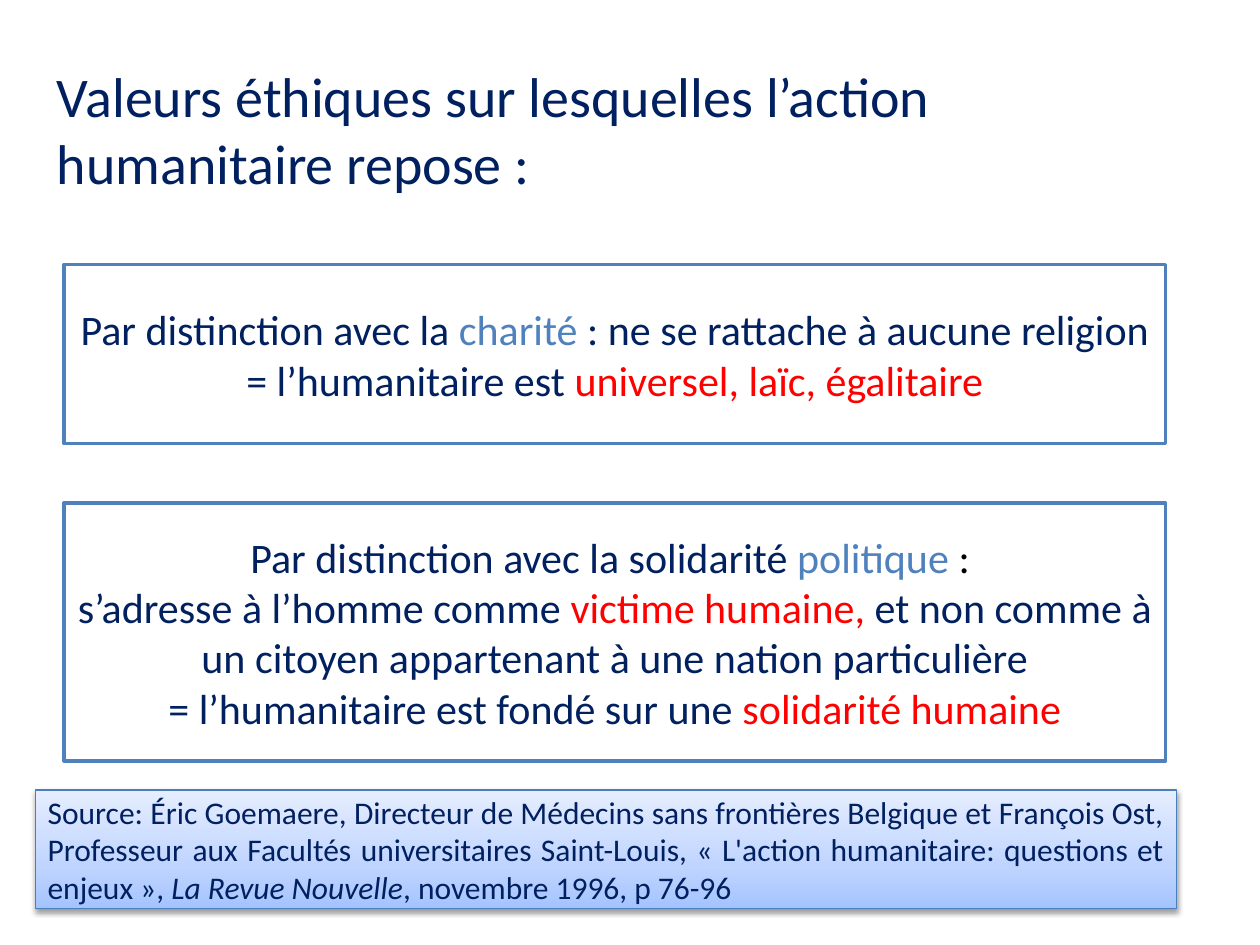
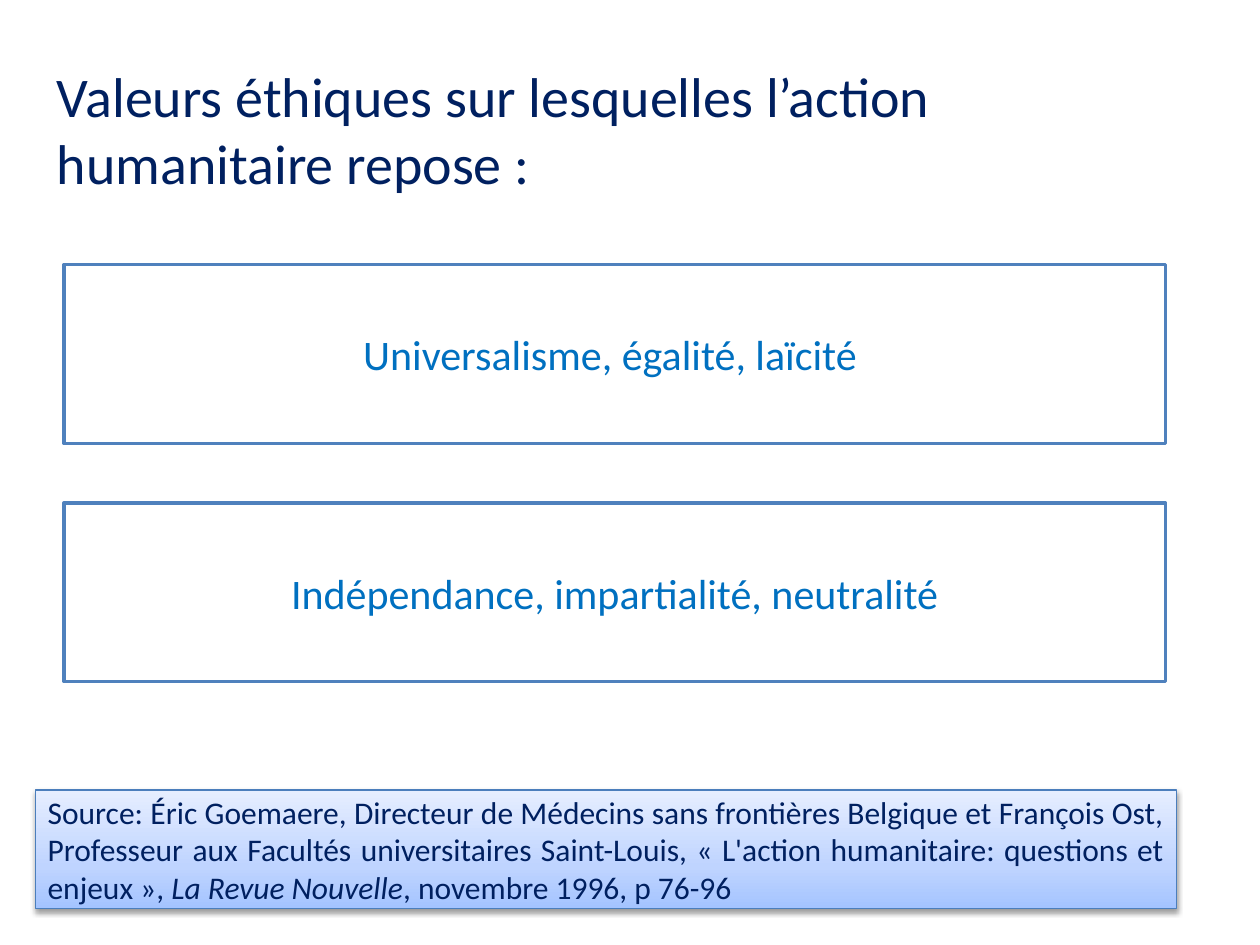
from lxml.etree import SubElement
from pptx import Presentation
from pptx.dml.color import RGBColor
from pptx.enum.shapes import MSO_SHAPE as Shape
from pptx.enum.text import MSO_ANCHOR as Anchor, MSO_AUTO_SIZE as AutoSize, PP_ALIGN as Align
from pptx.oxml.ns import qn
from pptx.util import Inches, Pt

FONT = "Calibri"
NAVY, STEEL, AZURE, RED, BLACK, WHITE = "002060", "4F81BD", "0070C0", "FF0000", "000000", "FFFFFF"
SOURCE_EDGE = "4B7EBC"
SOURCE_STOPS = [(0, "A4C4FF"), (35, "BFD4FF"), (100, "E6EEFF")]

HEADING = "Valeurs éthiques sur lesquelles l’action humanitaire repose :"
SOURCE = [
    ("Source: Éric Goemaere, Directeur de Médecins sans frontières Belgique et François Ost, "
     "Professeur aux Facultés universitaires Saint-Louis, « L'action humanitaire: questions "
     "et enjeux », ", NAVY),
    ("La Revue Nouvelle", NAVY, "italic"),
    (", novembre 1996, p 76-96 ", NAVY),
]

# Each slide lists its value boxes: (height, paragraphs of (text, colour) runs)
SLIDES = [
    [
        (1.42, [
            [("Par distinction avec la ", NAVY), ("charité ", STEEL),
             (": ne se rattache à aucune religion", NAVY)],
            [("= l’humanitaire est ", NAVY), ("universel, laïc, égalitaire", RED)],
        ]),
        (2.05, [
            [("Par distinction avec la solidarité ", NAVY), ("politique ", STEEL), (": ", BLACK)],
            [("s’adresse à l’homme comme ", NAVY), ("victime humaine, ", RED),
             ("et non comme à un citoyen appartenant à une nation particulière", NAVY)],
            [("= l’humanitaire est fondé sur une ", NAVY), ("solidarité humaine", RED)],
        ]),
    ],
    [
        (1.42, [[("Universalisme, égalité, laïcité ", AZURE)]]),
        (1.42, [[("Indépendance, impartialité, neutralité", AZURE)]]),
    ],
]

HEADING_AT = (0.35, 0.44, 9.15, 1.42)
SOURCE_AT = (0.28, 6.27, 9.06, 0.94)
VALUE_LEFT, VALUE_TOP, VALUE_WIDTH, VALUE_GAP = 0.51, 2.1, 8.74, 0.47


def rgb(hex_colour):
    return RGBColor.from_string(hex_colour)


def write(frame, paragraphs, size, align, anchor=Anchor.MIDDLE):
    frame.word_wrap = True
    frame.auto_size = AutoSize.NONE
    frame.vertical_anchor = anchor
    for number, runs in enumerate(paragraphs):
        paragraph = frame.add_paragraph() if number else frame.paragraphs[0]
        paragraph.alignment = align
        for text, colour, *style in runs:
            run = paragraph.add_run()
            run.text = text
            run.font.name = FONT
            run.font.size = Pt(size)
            run.font.color.rgb = rgb(colour)
            run.font.italic = "italic" in style


def add_panel(slide, at, edge, edge_width):
    panel = slide.shapes.add_shape(Shape.RECTANGLE, *map(Inches, at))
    panel.shadow.inherit = False
    panel.fill.solid()
    panel.fill.fore_color.rgb = rgb(WHITE)
    panel.line.color.rgb = rgb(edge)
    panel.line.width = Pt(edge_width)
    return panel


def add_gradient(panel, stops, angle):
    panel.fill.gradient()
    panel.fill.gradient_angle = angle
    stop_list = panel._element.spPr.find(".//" + qn("a:gsLst"))
    for old_stop in list(stop_list):
        stop_list.remove(old_stop)
    for share, colour in stops:
        stop = SubElement(stop_list, qn("a:gs"), pos=str(share * 1000))
        SubElement(stop, qn("a:srgbClr"), val=colour)


def add_drop_shadow(panel, blur, distance, opacity):
    effects = panel._element.spPr.find(qn("a:effectLst"))
    shadow = SubElement(effects, qn("a:outerShdw"), blurRad=str(Pt(blur)),
                        dist=str(Pt(distance)), dir="5400000", rotWithShape="0")
    colour = SubElement(shadow, qn("a:srgbClr"), val=BLACK)
    SubElement(colour, qn("a:alpha"), val=str(opacity * 1000))


def add_heading(slide):
    heading = slide.shapes.title
    heading.left, heading.top, heading.width, heading.height = map(Inches, HEADING_AT)
    write(heading.text_frame, [[(HEADING, NAVY)]], 32, Align.LEFT, Anchor.TOP)


def add_values(slide, values):
    top = VALUE_TOP
    for height, paragraphs in values:
        panel = add_panel(slide, (VALUE_LEFT, top, VALUE_WIDTH, height), STEEL, 2)
        write(panel.text_frame, paragraphs, 24, Align.CENTER)
        top += height + VALUE_GAP


def add_source(slide):
    panel = add_panel(slide, SOURCE_AT, SOURCE_EDGE, 0.75)
    add_gradient(panel, SOURCE_STOPS, angle=90)
    add_drop_shadow(panel, blur=3.1, distance=1.6, opacity=38)
    write(panel.text_frame, [SOURCE], 18, Align.JUSTIFY)


def main():
    deck = Presentation()
    deck.slide_width, deck.slide_height = Inches(10), Inches(7.5)
    title_only = deck.slide_layouts.get_by_name("Title Only")
    for values in SLIDES:
        slide = deck.slides.add_slide(title_only)
        add_heading(slide)
        add_values(slide, values)
        add_source(slide)
    deck.save("out.pptx")


if __name__ == "__main__":
    main()
